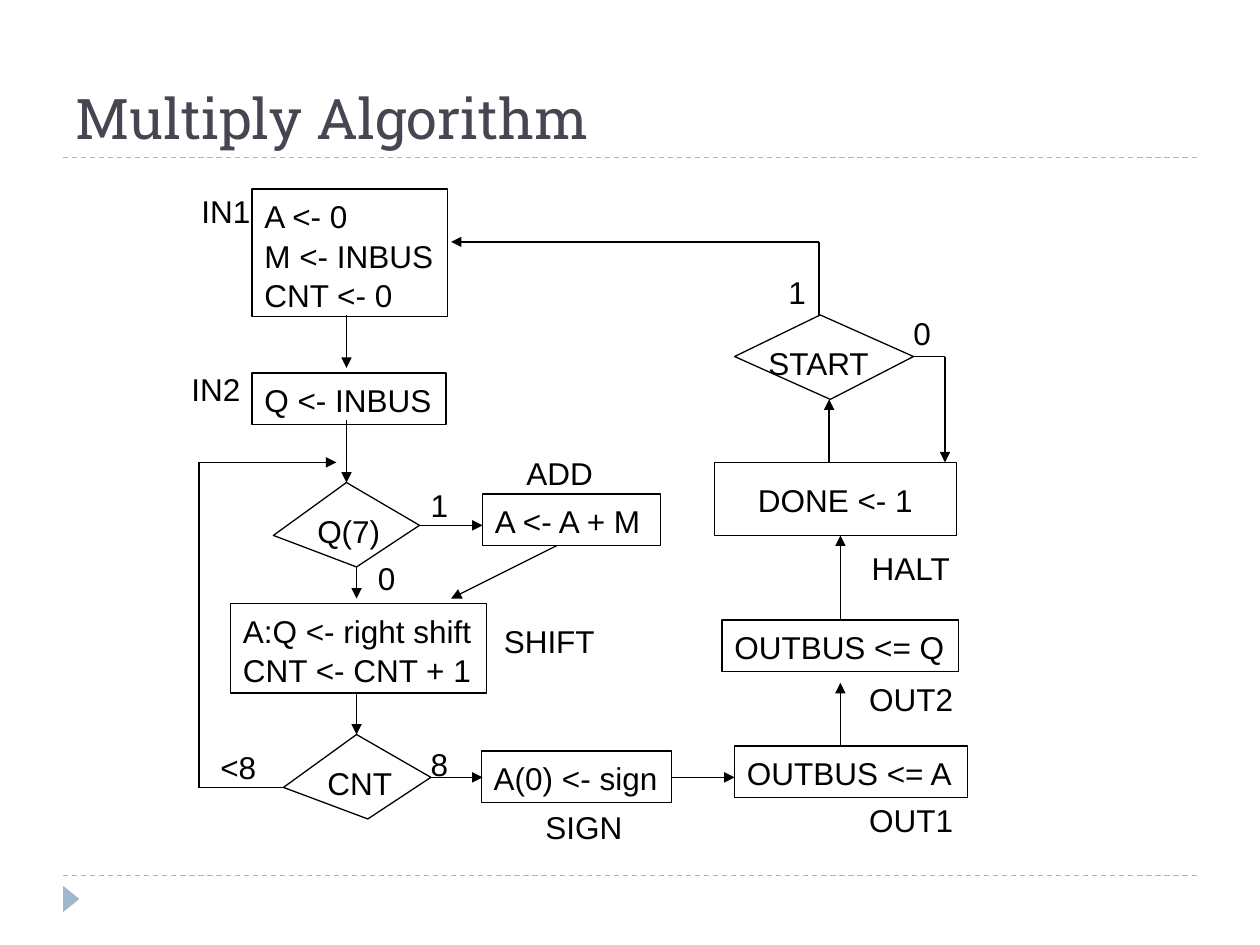
from pptx import Presentation
from pptx.dml.color import RGBColor
from pptx.enum.dml import MSO_LINE
from pptx.enum.shapes import MSO_CONNECTOR, MSO_SHAPE
from pptx.enum.text import MSO_ANCHOR, PP_ALIGN
from pptx.oxml.ns import qn
from pptx.util import Inches, Pt
from lxml import etree


def rgb(value):
    return RGBColor.from_string(value)


def write(tf, text, font="Arial", size=18, color="000000", align=PP_ALIGN.LEFT,
          anchor=MSO_ANCHOR.TOP, wrap=False, spacing=1.05):
    tf.word_wrap = wrap
    tf.vertical_anchor = anchor
    for i, line in enumerate(text.split("\n")):
        p = tf.paragraphs[0] if i == 0 else tf.add_paragraph()
        p.alignment = align
        p.line_spacing = spacing
        r = p.add_run()
        r.text = line
        r.font.name = font
        r.font.size = Pt(size)
        r.font.color.rgb = rgb(color)


class Flowchart:
    ink = "000000"
    accent = "9FB8CD"
    weight = Pt(0.75)

    def __init__(self, s):
        self.s = s

    def title(self, text):
        sp = self.s.shapes.title
        sp.left, sp.top, sp.width, sp.height = map(Inches, (0.5, 0.25, 9, 1))
        write(sp.text_frame, text, font="Roboto Slab", size=32, color="464653",
              anchor=MSO_ANCHOR.BOTTOM, wrap=True, spacing=1.0)

    def outline(self, sp):
        sp.shadow.inherit = False
        sp.fill.background()
        sp.line.color.rgb = rgb(self.ink)
        sp.line.width = self.weight

    def box(self, text, x, y, w, h, **fmt):
        sp = self.s.shapes.add_shape(MSO_SHAPE.RECTANGLE, *map(Inches, (x, y, w, h)))
        self.outline(sp)
        write(sp.text_frame, text, **fmt)

    def label(self, text, x, y, w):
        sp = self.s.shapes.add_textbox(*map(Inches, (x, y, w, 0.4)))
        write(sp.text_frame, text)

    def decision(self, text, x, y, w, corners):
        points = [(Inches(a), Inches(b)) for a, b in corners]
        builder = self.s.shapes.build_freeform(*points[0])
        builder.add_line_segments(points[1:], close=True)
        self.outline(builder.convert_to_shape())
        self.label(text, x, y, w)

    def line(self, start, end, color=ink, dash=None, arrow=False):
        sp = self.s.shapes.add_connector(
            MSO_CONNECTOR.STRAIGHT, *map(Inches, (*start, *end)))
        sp.line.color.rgb = rgb(color)
        sp.line.width = self.weight
        if dash:
            sp.line.dash_style = dash
        if arrow:
            etree.SubElement(sp.line._get_or_add_ln(), qn("a:tailEnd"), type="triangle")
        etree.SubElement(sp._element.spPr, qn("a:effectLst"))

    def flow(self, *points):
        last = len(points) - 2
        for i, (start, end) in enumerate(zip(points, points[1:])):
            self.line(start, end, arrow=i == last)

    def frame(self):
        for y in (1.25, 6.95):
            self.line((0.5, y), (9.5, y), color=self.accent, dash=MSO_LINE.DASH)
        sp = self.s.shapes.add_shape(
            MSO_SHAPE.ISOSCELES_TRIANGLE, *map(Inches, (0.46, 7.07, 0.21, 0.13)))
        sp.rotation = 90
        sp.shadow.inherit = False
        sp.fill.solid()
        sp.fill.fore_color.rgb = rgb(self.accent)
        sp.line.fill.background()


BOXES = [
    ("A <- 0\nM <- INBUS\nCNT <- 0", 2, 1.5, 1.55, 1.01),
    ("Q <- INBUS", 2, 2.96, 1.54, 0.41),
    ("A <- A + M", 3.83, 3.92, 1.41, 0.41),
    ("A:Q <- right shift\nCNT <- CNT + 1", 1.83, 4.79, 2.03, 0.71),
    ("A(0) <- sign", 3.82, 5.96, 1.51, 0.41),
    ("OUTBUS <= A", 5.83, 5.92, 1.85, 0.41),
    ("OUTBUS <= Q", 5.73, 4.92, 1.88, 0.41),
]

DECISIONS = [
    ("Q(7)", 2.42, 4, 0.7, [(2.75, 3.83), (2.17, 4.25), (2.83, 4.5), (3.33, 4.17)]),
    ("CNT", 2.5, 6, 0.72, [(2.83, 5.83), (2.25, 6.25), (2.92, 6.5), (3.42, 6.17)]),
    ("START", 6, 2.67, 1.02, [(6.51, 2.5), (5.83, 2.83), (6.59, 3.17), (7.25, 2.83)]),
]

FLOWS = [
    [(2.75, 2.5), (2.75, 2.92)],
    [(2.75, 3.33), (2.75, 3.83)],
    [(3.33, 4.17), (3.83, 4.17)],
    [(4.42, 4.33), (3.58, 4.75)],
    [(2.83, 4.5), (2.83, 4.75)],
    [(2.83, 5.5), (2.83, 5.83)],
    [(2.25, 6.25), (1.58, 6.25), (1.58, 3.67), (2.67, 3.67)],
    [(3.42, 6.17), (3.83, 6.17)],
    [(5.33, 6.17), (5.83, 6.17)],
    [(6.67, 5.92), (6.67, 5.42)],
    [(6.67, 4.92), (6.67, 4.25)],
    [(6.58, 3.67), (6.58, 3.17)],
    [(6.5, 2.5), (6.5, 1.92), (3.58, 1.92)],
    [(7.25, 2.83), (7.5, 2.83), (7.5, 3.67)],
]

LABELS = [
    ("IN1", 1.5, 1.46, 0.59),
    ("IN2", 1.42, 2.87, 0.59),
    ("ADD", 4.08, 3.54, 0.73),
    ("SHIFT", 3.9, 4.87, 0.92),
    ("SIGN", 4.23, 6.35, 0.81),
    ("OUT1", 6.8, 6.29, 0.87),
    ("OUT2", 6.8, 5.33, 0.87),
    ("HALT", 6.82, 4.29, 0.84),
    ("1", 3.32, 3.79, 0.34),
    ("0", 2.9, 4.37, 0.34),
    ("<8", 1.65, 5.87, 0.49),
    ("8", 3.32, 5.85, 0.34),
    ("0", 7.15, 2.43, 0.34),
    ("1", 6.16, 2.1, 0.34),
]


def main():
    prs = Presentation()
    prs.slide_width, prs.slide_height = Inches(10), Inches(7.5)
    chart = Flowchart(prs.slides.add_slide(prs.slide_layouts[5]))
    chart.frame()
    chart.title("Multiply Algorithm")
    for box in BOXES:
        chart.box(*box)
    chart.box("DONE <- 1", 5.67, 3.67, 1.92, 0.58,
              align=PP_ALIGN.CENTER, anchor=MSO_ANCHOR.MIDDLE, wrap=True)
    for decision in DECISIONS:
        chart.decision(*decision)
    for points in FLOWS:
        chart.flow(*points)
    for label in LABELS:
        chart.label(*label)
    prs.save("out.pptx")


if __name__ == "__main__":
    main()
